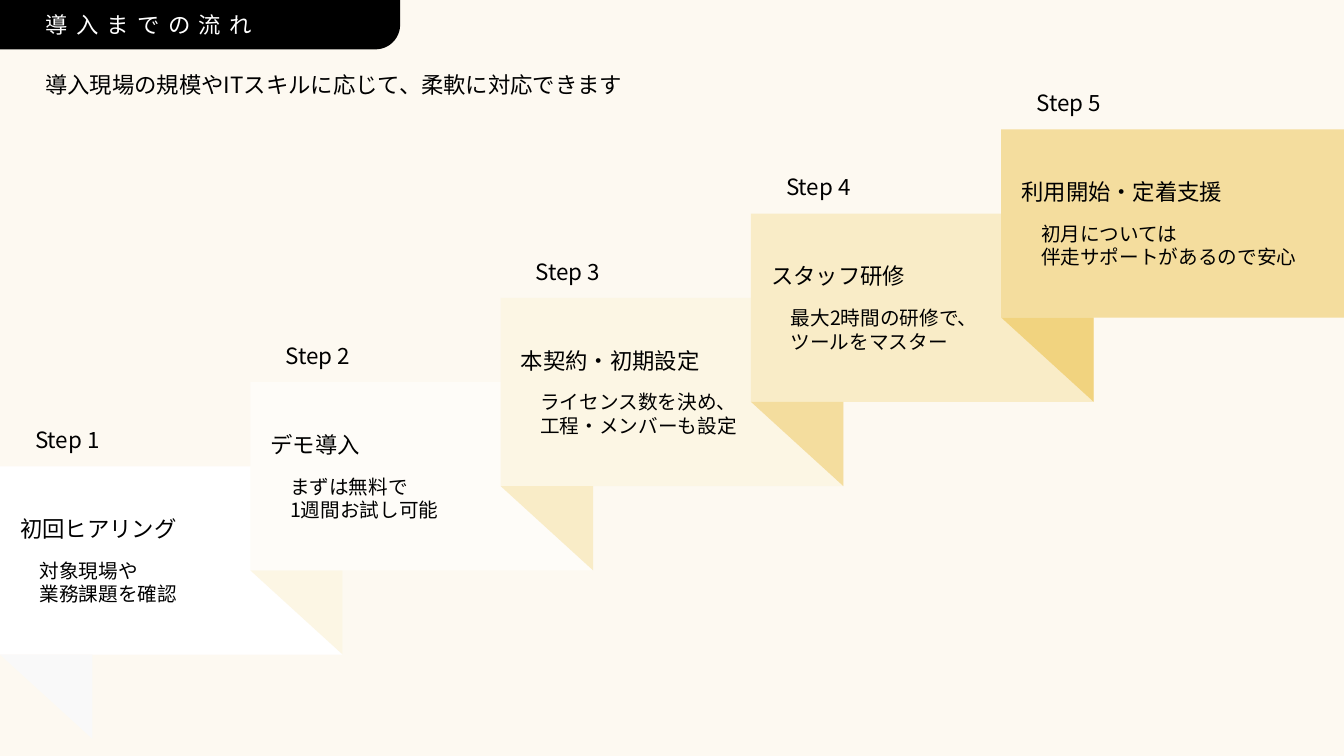
import copy
import pptx
import pptx.util
import pptx.dml.color
import pptx.enum.shapes
import pptx.enum.text
import pptx.oxml
import pptx.oxml.ns

Kind = pptx.enum.shapes.MSO_SHAPE
Align = pptx.enum.text.PP_ALIGN.LEFT
Mid = pptx.enum.text.MSO_ANCHOR.MIDDLE
Fixed = pptx.enum.text.MSO_AUTO_SIZE.NONE
Inch = pptx.util.Inches
Pt = pptx.util.Pt
qn = pptx.oxml.ns.qn

COLS, ROWS = 160, 90
FONT = "Noto Sans CJK JP"
HUES = {
    "back": "FDF9F1", "ink": "000000", "paper": "FFFFFF",
    "step1": "FFFFFF", "step2": "FEFCF8", "step3": "FCF6E4",
    "step4": "F9ECC7", "step5": "F4DD9E",
    "fold1": "F9F9F9", "fold2": "FCF6E4", "fold3": "F9ECC7",
    "fold4": "F4DD9E", "fold5": "F1D37F",
}
STEPS = [
    ("初回ヒアリング", "対象現場や\v業務課題を確認"),
    ("デモ導入", "まずは無料で\v1週間お試し可能"),
    ("本契約・初期設定", "ライセンス数を決め、\v工程・メンバーも設定"),
    ("スタッフ研修", "最大2時間の研修で、\vツールをマスター"),
    ("利用開始・定着支援", "初月については\v伴走サポートがあるので安心"),
]


def hue(name):
    return pptx.dml.color.RGBColor.from_string(HUES[name])


class Deck:
    def __init__(self):
        self.prs = pptx.Presentation()
        self.prs.slide_width = Inch(13.33)
        self.prs.slide_height = Inch(7.5)
        self.slide = self.prs.slides.add_slide(self.prs.slide_layouts[5])
        fill = self.slide.background.fill
        fill.solid()
        fill.fore_color.rgb = hue("back")

    def area(self, x, y, w, h):
        wide, high = self.prs.slide_width / COLS, self.prs.slide_height / ROWS
        return [round(n) for n in (x * wide, y * high, w * wide, h * high)]

    def form(self, kind, spot, color):
        shape = self.slide.shapes.add_shape(kind, *self.area(*spot))
        shape.shadow.inherit = False
        shape.fill.solid()
        shape.fill.fore_color.rgb = hue(color)
        shape.line.fill.background()
        return shape

    def words(self, shape, lines, color="ink", gap=6, left=0.1, track=0):
        frame = shape.text_frame
        style = {"word_wrap": True, "auto_size": Fixed, "vertical_anchor": Mid,
                 "margin_left": Inch(left), "margin_right": Inch(0.1),
                 "margin_top": Inch(0.05), "margin_bottom": Inch(0.05)}
        for key, val in style.items():
            setattr(frame, key, val)
        for i, (text, size, inset) in enumerate(lines):
            para = frame.add_paragraph() if i else frame.paragraphs[0]
            para.text = text
            for key, val in {"alignment": Align, "space_before": Pt(gap),
                             "line_spacing": 1.0}.items():
                setattr(para, key, val)
            para._p.get_or_add_pPr().set("marL", str(Pt(inset)))
            for run in para.runs:
                run.font.color.rgb = hue(color)
                for key, val in {"name": FONT, "size": Pt(size)}.items():
                    setattr(run.font, key, val)
                props = run._r.get_or_add_rPr()
                props.set("spc", str(track * 100))
                east = pptx.oxml.parse_xml(
                    f'<a:ea {pptx.oxml.ns.nsdecls("a")} typeface="{FONT}"/>')
                props.find(qn("a:latin")).addnext(east)
            for brk in para._p.findall(qn("a:br")):
                brk.append(copy.deepcopy(para.runs[0]._r.rPr))

    def label(self, spot, text):
        box = self.slide.shapes.add_textbox(*self.area(*spot))
        self.words(box, [(text, 16, 0)])

    def title(self, spot, text):
        head = self.slide.shapes.title
        for key, val in zip(("left", "top", "width", "height"), self.area(*spot)):
            setattr(head, key, val)
        self.words(head, [(text, 16, 0)], "paper", track=6)
        self.slide.shapes._spTree.append(head._element)

    def tab(self, spot):
        shape = self.form(Kind.ROUND_1_RECTANGLE, spot, "ink")
        shape.adjustments[0] = 0.5
        shape._element.spPr.xfrm.set("flipV", "1")

    def step(self, num, spot, run, rise, head, body):
        x, y, w, h = spot
        card = self.form(Kind.RECTANGLE, spot, f"step{num}")
        self.words(card, [(head, 16, 0), (body, 14, 14)], gap=12, left=0.2)
        fold = self.form(Kind.RIGHT_TRIANGLE, (x, y + h, w - run, rise), f"fold{num}")
        fold.rotation = 180
        self.label((x + 3, y - 5.4, 23, 4.4), f"Step {num}")


def main():
    deck = Deck()
    deck.label((4.2, 7.44, 150.2, 5.28), "導入現場の規模やITスキルに応じて、柔軟に対応できます")
    deck.tab((0, 0, 47.64, 5.88))
    deck.title((4.2, 0, 43.44, 5.88), "導入までの流れ")
    wide, high, base, rise = 40.8, 22.4, 55.53, 10.03
    run = (COLS - wide) / (len(STEPS) - 1)
    for i, (head, body) in enumerate(STEPS):
        deck.step(i + 1, (i * run, base - i * rise, wide, high), run, rise, head, body)
    deck.prs.save("out.pptx")


if __name__ == "__main__":
    main()
